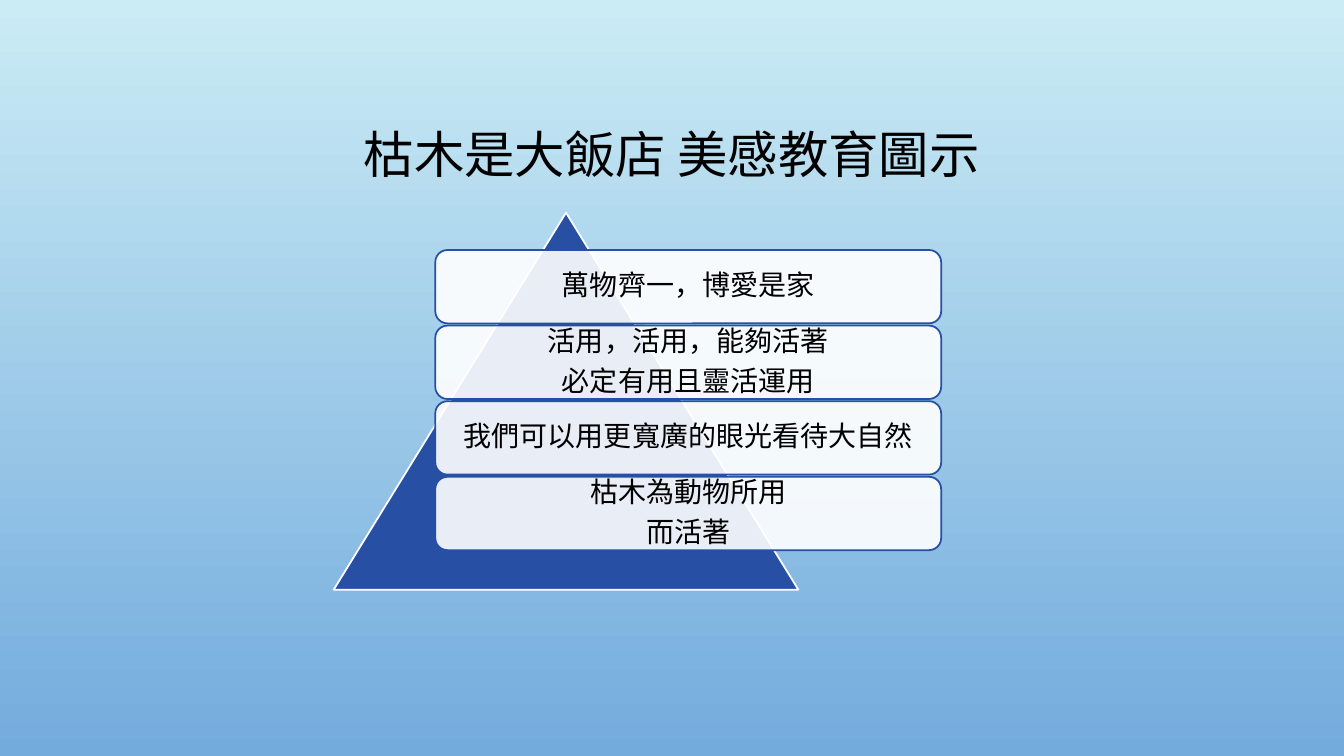
from dataclasses import dataclass

from lxml.etree import SubElement
from pptx import Presentation
from pptx.dml.color import RGBColor
from pptx.enum.shapes import MSO_SHAPE
from pptx.enum.text import MSO_ANCHOR, PP_ALIGN
from pptx.oxml.ns import qn
from pptx.shapes.autoshape import Shape
from pptx.slide import Slide
from pptx.util import Cm, Pt

BLACK = RGBColor(0x00, 0x00, 0x00)
WHITE = RGBColor(0xFF, 0xFF, 0xFF)
NAVY = RGBColor(0x27, 0x4F, 0xA4)
SKY = RGBColor(0xCB, 0xEC, 0xF5)
BLUE = RGBColor(0x73, 0xAB, 0xDD)

FONT = "Cabin"
TOP, STEP = 6.3, 1.905


@dataclass
class Box:
    left: float
    top: float
    width: float
    height: float

    def cm(self) -> tuple[Cm, Cm, Cm, Cm]:
        return Cm(self.left), Cm(self.top), Cm(self.width), Cm(self.height)


@dataclass
class Card:
    row: int
    lines: list[str]


CARDS = [
    Card(0, ["萬物齊一，博愛是家"]),
    Card(1, ["活用，活用，能夠活著", "必定有用且靈活運用"]),
    Card(2, ["我們可以用更寬廣的眼光看待大自然"]),
    Card(3, ["枯木為動物所用", "而活著"]),
]


def write(shape: Shape, lines: list[str], *, size: float, inset: float = 0.2,
          after: float = 0) -> None:
    frame = shape.text_frame
    frame.word_wrap = True
    frame.vertical_anchor = MSO_ANCHOR.MIDDLE
    frame.margin_left = frame.margin_right = Cm(inset)
    frame.margin_top = frame.margin_bottom = Cm(inset)
    for i, line in enumerate(lines):
        para = frame.paragraphs[0] if i == 0 else frame.add_paragraph()
        para.alignment = PP_ALIGN.CENTER
        para.line_spacing = 0.9
        para.space_after = Pt(after)
        run = para.add_run()
        run.text = line
        run.font.name = FONT
        run.font.size = Pt(size)
        run.font.color.rgb = BLACK


def draw(slide: Slide, kind: MSO_SHAPE, box: Box, fill: RGBColor,
         edge: RGBColor) -> Shape:
    shape = slide.shapes.add_shape(kind, *box.cm())
    shape.shadow.inherit = False
    shape.fill.solid()
    shape.fill.fore_color.rgb = fill
    shape.line.color.rgb = edge
    shape.line.width = Pt(1.25)
    return shape


def fade(shape: Shape, percent: int) -> None:
    """Set the opacity of a solid fill."""
    color = shape.fill._xPr.find(qn("a:solidFill"))[0]
    SubElement(color, qn("a:alpha")).set("val", str(percent * 1000))


def paint(slide: Slide) -> None:
    """Fill the background from sky at the top to blue at the bottom."""
    fill = slide.background.fill
    fill.gradient()
    fill.gradient_angle = 270
    for stop, color, place in zip(fill.gradient_stops, (SKY, BLUE), (0, 1)):
        stop.color.rgb = color
        stop.position = place


def main() -> None:
    deck = Presentation()
    deck.slide_width, deck.slide_height = Cm(33.87), Cm(19.05)
    slide = deck.slides.add_slide(deck.slide_layouts[6])
    paint(slide)

    title = slide.shapes.add_textbox(*Box(2.54, 1.73, 28.78, 4.45).cm())
    write(title, ["枯木是大飯店 美感教育圖示"], size=36)

    draw(slide, MSO_SHAPE.ISOSCELES_TRIANGLE, Box(8.41, 5.36, 11.71, 9.5),
         NAVY, WHITE)
    for card in CARDS:
        box = Box(10.97, TOP + card.row * STEP, 12.75, 1.85)
        shape = draw(slide, MSO_SHAPE.ROUNDED_RECTANGLE, box, WHITE, NAVY)
        fade(shape, 90)
        write(shape, card.lines, size=20, after=7)

    deck.save("out.pptx")


if __name__ == "__main__":
    main()
